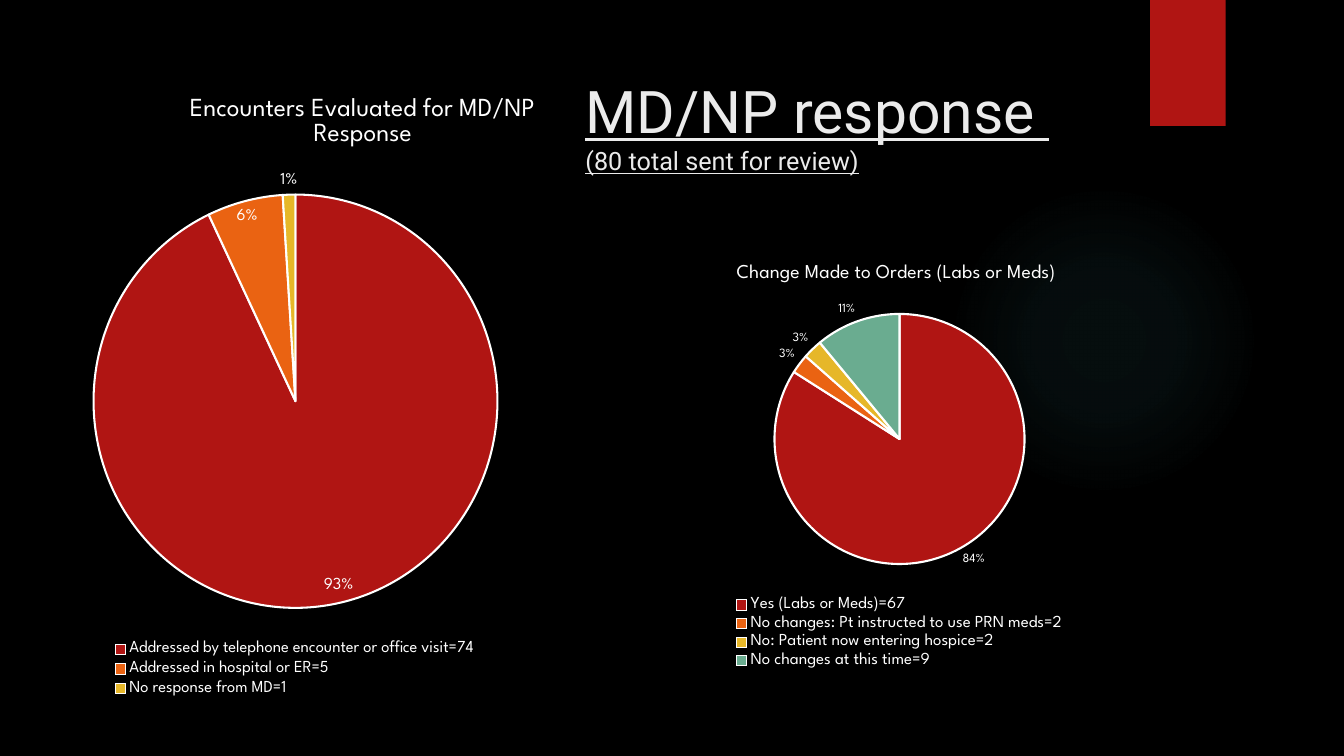
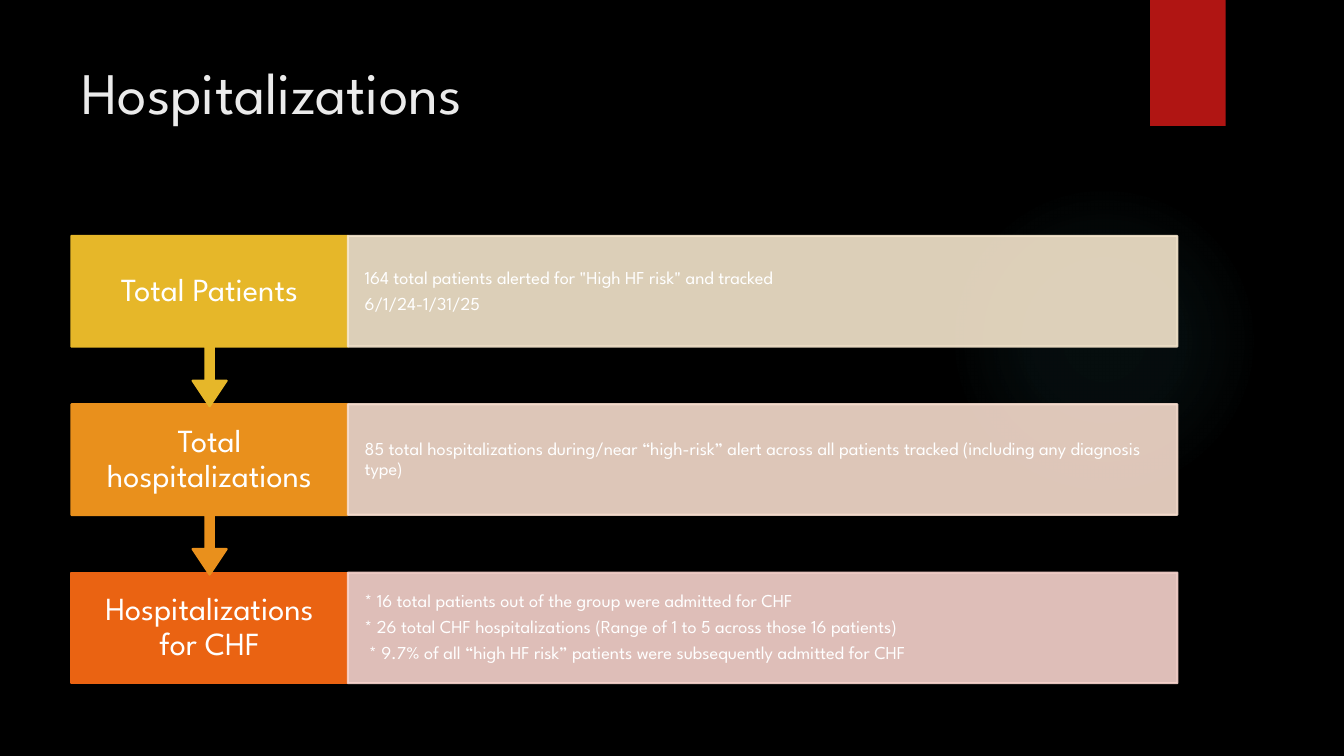
from lxml import etree
from pptx import Presentation
from pptx.chart.data import CategoryChartData
from pptx.dml.color import RGBColor
from pptx.enum import chart as ch, shapes, text
from pptx.oxml.ns import qn
from pptx.util import Pt

FONT = "League Spartan"
BLACK, WHITE, TITLE = "000000", "FFFFFF", "EBEBEB"
RED, ORANGE, GOLD, GREEN, AMBER = "B01513", "EA6312", "E6B729", "6AAC90", "E9901C"
GLOW, GLOW_STOPS = "50B9C1", [(0, 7), (36, 6), (69, 0)]
PIE_COLORS = [RED, ORANGE, GOLD, GREEN]

RESPONSE = {
    "title": "MD/NP response \v(80 total sent for review)",
    "box": (411, 50, 392, 116),
    "styles": [(42, "Roboto", True), (18, "Roboto", True)],
}
HOSPITAL = {
    "title": "Hospitalizations",
    "box": (51, 36, 741, 110),
    "styles": [(42, FONT, False)],
}
PIES = [
    {
        "title": "Encounters Evaluated for MD/NP Response",
        "box": (50.4, 50.4, 335.5, 450),
        "title_size": 18.6,
        "label_size": 12,
        "label_pos": ch.XL_LABEL_POSITION.BEST_FIT,
        "data": [
            ("Addressed by telephone encounter or office visit=74", 92),
            ("Addressed in hospital or ER=5", 6),
            ("No response from MD=1", 1),
        ],
        "layout": {
            "title": (0.25, 0.03),
            "plotArea": (0.05, 0.19, 0.88, 0.67),
            "legend": (0.09, 0.9, 0.8, 0.1),
        },
    },
    {
        "title": "Change Made to Orders (Labs or Meds)",
        "box": (411, 175, 458.5, 308),
        "title_size": 14,
        "label_size": 9,
        "label_pos": ch.XL_LABEL_POSITION.OUTSIDE_END,
        "data": [
            ("Yes (Labs or Meds)=67", 84),
            ("No changes: Pt instructed to use PRN meds=2", 2.5),
            ("No: Patient now entering hospice=2", 2.5),
            ("No changes at this time=9", 11),
        ],
        "layout": {
            "plotArea": (0.31, 0.16, 0.39, 0.58),
            "legend": (0.24, 0.81, 0.53, 0.18),
        },
    },
]
STEPS = [
    ("Total Patients", GOLD, "F5E6CD", [
        "164 total patients alerted for \"High HF risk\" and tracked",
        "6/1/24-1/31/25",
    ]),
    ("Total hospitalizations", AMBER, "F6DCCD", [
        "85 total hospitalizations during/near “high-risk” alert across all "
        "patients tracked (including any diagnosis type)",
    ]),
    ("Hospitalizations for CHF", ORANGE, "F7D3CC", [
        "* 16 total patients out of the group were admitted for CHF",
        "* 26 total CHF hospitalizations (Range of 1 to 5 across those 16 patients)",
        " * 9.7% of all “high HF risk” patients were subsequently admitted for CHF",
    ]),
]
STEP_LEFT, STEP_TOP, STEP_PITCH, STEP_H = 51, 168.5, 120.25, 79
LABEL_W, DETAIL_W = 197.5, 592.5
CALLOUT_H, CALLOUT_ADJ = 121.7, (0.05, 0.1, 0.15, 0.65)


def rgb(value):
    return RGBColor.from_string(value)


def style(font, size, color=WHITE, name=FONT):
    font.size, font.name, font.bold = Pt(size), name, False
    font.color.rgb = rgb(color)


def add_box(s, kind, box, color, alpha=None, line=None):
    sp = s.shapes.add_shape(kind, *map(Pt, box))
    sp.shadow.inherit = False
    sp.fill.solid()
    sp.fill.fore_color.rgb = rgb(color)
    if line:
        sp.line.width = Pt(line)
        sp.line.color.rgb = rgb(color)
    else:
        sp.line.fill.background()
    if alpha:
        for clr in sp.element.spPr.iter(qn("a:srgbClr")):
            etree.SubElement(clr, qn("a:alpha"), val=str(alpha * 1000))
    return sp


def write(sp, lines, size, align, inset):
    tf = sp.text_frame
    tf.word_wrap = True
    tf.vertical_anchor = text.MSO_ANCHOR.MIDDLE
    tf.margin_left = tf.margin_right = Pt(inset)
    tf.margin_top = tf.margin_bottom = Pt(13)
    tf.text = "\n".join(lines)
    for p in tf.paragraphs:
        p.alignment, p.line_spacing, p.space_after = align, 0.9, Pt(size * 0.35)
        style(p.runs[0].font, size)


def radial_fill(sp, color, stops):
    solid = sp.element.spPr.find(qn("a:solidFill"))
    grad = etree.Element(qn("a:gradFill"), rotWithShape="1")
    gs_list = etree.SubElement(grad, qn("a:gsLst"))
    for pos, alpha in stops:
        gs = etree.SubElement(gs_list, qn("a:gs"), pos=str(pos * 1000))
        clr = etree.SubElement(gs, qn("a:srgbClr"), val=color)
        etree.SubElement(clr, qn("a:alpha"), val=str(alpha * 1000))
    circle = etree.SubElement(grad, qn("a:path"), path="circle")
    etree.SubElement(circle, qn("a:fillToRect"), l="50000", t="50000", r="50000", b="50000")
    solid.getparent().replace(solid, grad)


def decorate(prs, layout, s):
    fill = prs.slide_master.background.fill
    fill.solid()
    fill.fore_color.rgb = rgb(BLACK)
    glow = add_box(s, shapes.MSO_SHAPE.OVAL, (677.5, 132, 222, 222), GLOW)
    radial_fill(glow, GLOW, GLOW_STOPS)
    tag = add_box(s, shapes.MSO_SHAPE.RECTANGLE, (821.5, 0, 54, 90), RED)
    for i, sp in enumerate((glow, tag)):
        layout.shapes.element.insert(2 + i, sp.element)


def add_title(s, spec_):
    sp = s.shapes.title
    sp.left, sp.top, sp.width, sp.height = map(Pt, spec_["box"])
    tf = sp.text_frame
    tf.text = spec_["title"]
    tf.word_wrap = True
    tf.vertical_anchor = text.MSO_ANCHOR.TOP
    p = tf.paragraphs[0]
    p.alignment = text.PP_ALIGN.LEFT
    for r, (size, name, underline) in zip(p.runs, spec_["styles"]):
        style(r.font, size, TITLE, name)
        r.font.underline = underline


def place(chart, tag, values):
    part = chart.element.find(".//" + qn("c:" + tag))
    old = part.find(qn("c:layout"))
    if old is not None:
        part.remove(old)
    layout = etree.Element(qn("c:layout"))
    manual = etree.SubElement(layout, qn("c:manualLayout"))
    if tag == "plotArea":
        etree.SubElement(manual, qn("c:layoutTarget"), val="inner")
    for mode in ("xMode", "yMode"):
        etree.SubElement(manual, qn("c:" + mode), val="edge")
    for key, value in zip("xywh", values):
        etree.SubElement(manual, qn("c:" + key), val=str(value))
    part.insert(0 if tag == "plotArea" else 1, layout)


def add_pie(s, pie):
    data = CategoryChartData()
    data.categories = [name for name, _ in pie["data"]]
    data.add_series(pie["title"], [value for _, value in pie["data"]])
    frame = s.shapes.add_chart(ch.XL_CHART_TYPE.PIE, *map(Pt, pie["box"]), data)
    chart = frame.chart
    style(chart.font, 10)
    chart.has_title = True
    tf = chart.chart_title.text_frame
    tf.text = pie["title"]
    style(tf.paragraphs[0].runs[0].font, pie["title_size"])
    chart.chart_title.include_in_layout = False
    chart.has_legend = True
    chart.legend.position = ch.XL_LEGEND_POSITION.BOTTOM
    chart.legend.include_in_layout = False
    style(chart.legend.font, 12)
    plot = chart.plots[0]
    plot.vary_by_categories = True
    for i, color in enumerate(PIE_COLORS[:len(pie["data"])]):
        fmt = plot.series[0].points[i].format
        fmt.fill.solid()
        fmt.fill.fore_color.rgb = rgb(color)
        fmt.line.width = Pt(1.5)
        fmt.line.color.rgb = rgb(WHITE)
    labels = plot.series[0].data_labels
    labels.show_percentage, labels.show_value = True, False
    labels.number_format, labels.number_format_is_linked = "0%", False
    labels.position = pie["label_pos"]
    style(labels.font, pie["label_size"])
    for tag, values in pie["layout"].items():
        place(chart, tag, values)


def add_steps(s):
    last = len(STEPS) - 1
    for i, (label, color, tint, lines) in reversed(list(enumerate(STEPS))):
        top = STEP_TOP + i * STEP_PITCH
        kind, height = shapes.MSO_SHAPE.RECTANGLE, STEP_H
        if i < last:
            kind, height = shapes.MSO_SHAPE.DOWN_ARROW_CALLOUT, CALLOUT_H
        head = add_box(s, kind, (STEP_LEFT, top, LABEL_W, height), color, line=1.5)
        if i < last:
            for k, value in enumerate(CALLOUT_ADJ):
                head.adjustments[k] = value
        write(head, [label], 23, text.PP_ALIGN.CENTER, 14)
        detail = add_box(s, shapes.MSO_SHAPE.RECTANGLE,
                         (STEP_LEFT + LABEL_W, top, DETAIL_W, STEP_H), tint, 90, 1.5)
        write(detail, lines, 13, text.PP_ALIGN.LEFT, 12)


def main():
    prs = Presentation()
    prs.slide_width, prs.slide_height = Pt(960), Pt(540)
    layout = prs.slide_layouts[5]

    s = prs.slides.add_slide(layout)
    decorate(prs, layout, s)
    add_title(s, RESPONSE)
    for pie in PIES:
        add_pie(s, pie)

    s = prs.slides.add_slide(layout)
    add_title(s, HOSPITAL)
    add_steps(s)

    prs.save("out.pptx")


if __name__ == "__main__":
    main()
